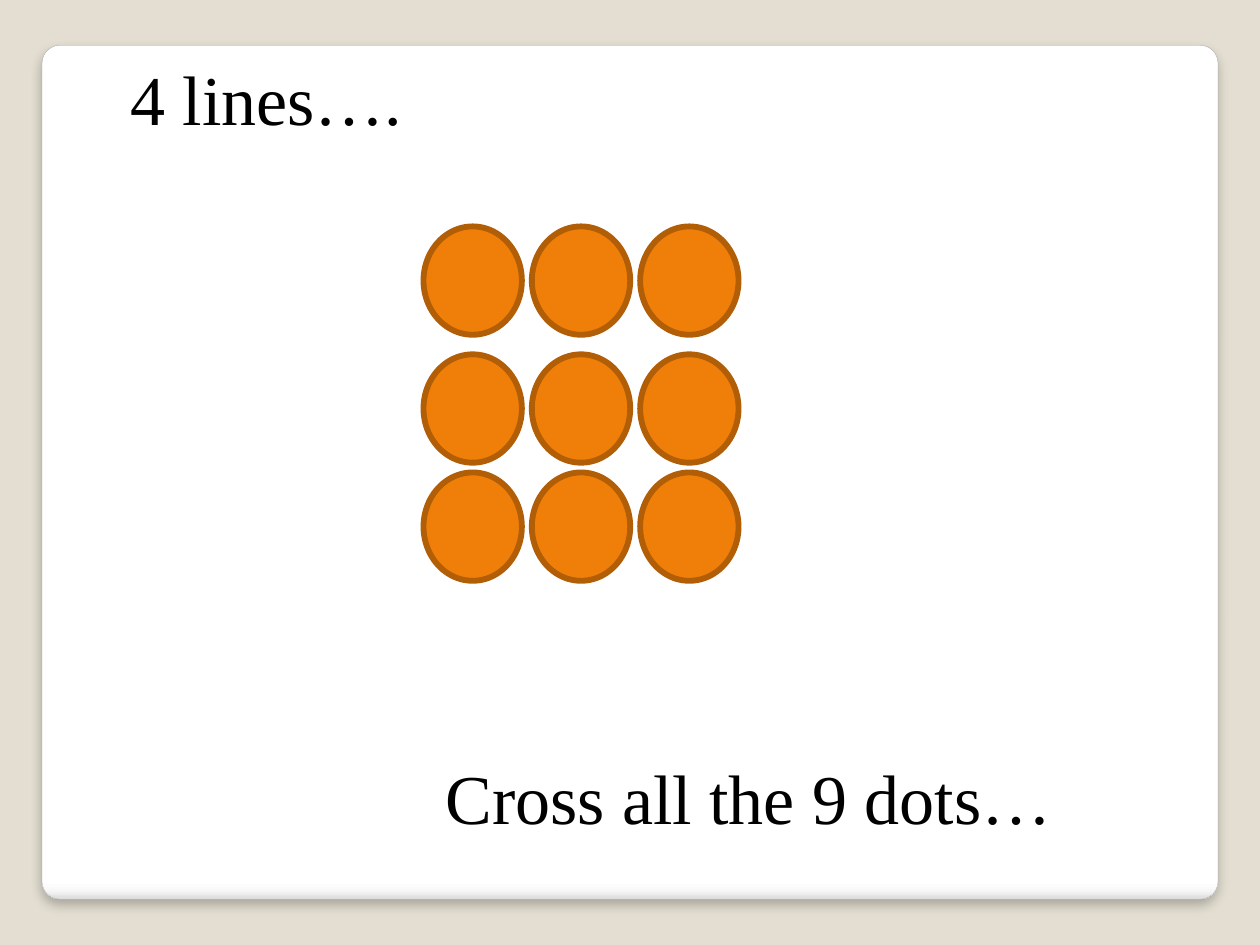
from dataclasses import dataclass
from itertools import product

from lxml.etree import SubElement
from pptx import Presentation
from pptx.dml.color import RGBColor
from pptx.enum.shapes import MSO_SHAPE
from pptx.enum.text import MSO_AUTO_SIZE
from pptx.oxml.ns import qn
from pptx.util import Pt


@dataclass(frozen=True)
class Theme:
    backdrop: str = "E3DED1"
    card_stops: tuple = ((0, "FFFFFF"), (98, "FFFFFF"), (99, "F7F7F7"), (100, "DADADA"))
    card_edge: str = "A4A4A4"
    shadow: str = "000000"
    dot: str = "F07F09"
    dot_edge: str = "B25E07"
    ink: str = "000000"
    font: str = "Times New Roman"
    text_size: float = 40


def add_color(parent, color):
    return SubElement(parent, qn("a:srgbClr"), val=color)


class SlideBuilder:
    def __init__(self, page, theme):
        self.page = page
        self.theme = theme

    def background(self):
        fill = self.page.background.fill
        fill.solid()
        fill.fore_color.rgb = RGBColor.from_string(self.theme.backdrop)

    def shape(self, kind, left, top, width, height, edge, edge_width):
        shape = self.page.shapes.add_shape(kind, Pt(left), Pt(top), Pt(width), Pt(height))
        shape.line.color.rgb = RGBColor.from_string(edge)
        shape.line.width = Pt(edge_width)
        shape.shadow.inherit = False
        return shape

    def card(self, left, top, width, height):
        card = self.shape(MSO_SHAPE.ROUNDED_RECTANGLE, left, top, width, height,
                          self.theme.card_edge, 0.16)
        card.adjustments[0] = 0.021
        # Gradient from top to bottom, darkening at the lower edge
        card.fill.gradient()
        card.fill.gradient_angle = 270
        properties = card._element.spPr
        stops = properties.find(".//" + qn("a:gsLst"))
        for stop in list(stops):
            stops.remove(stop)
        for percent, color in self.theme.card_stops:
            add_color(SubElement(stops, qn("a:gs"), pos=str(percent * 1000)), color)
        # Soft shadow below
        shadow = SubElement(properties.find(qn("a:effectLst")), qn("a:outerShdw"),
                            blurRad=str(Pt(6)), dist=str(Pt(4)), dir="5400000",
                            algn="ctr", rotWithShape="0")
        SubElement(add_color(shadow, self.theme.shadow), qn("a:alpha"), val="25000")

    def dot(self, left, top, width, height):
        dot = self.shape(MSO_SHAPE.OVAL, left, top, width, height,
                         self.theme.dot_edge, 3.35)
        dot.fill.solid()
        dot.fill.fore_color.rgb = RGBColor.from_string(self.theme.dot)

    def text(self, words, left, top, width, height):
        box = self.page.shapes.add_textbox(Pt(left), Pt(top), Pt(width), Pt(height))
        frame = box.text_frame
        frame.word_wrap = True
        frame.auto_size = MSO_AUTO_SIZE.SHAPE_TO_FIT_TEXT
        paragraph = frame.paragraphs[0]
        paragraph.text = words
        paragraph.font.name = self.theme.font
        paragraph.font.size = Pt(self.theme.text_size)
        paragraph.font.color.rgb = RGBColor.from_string(self.theme.ink)


def main():
    deck = Presentation()
    deck.slide_width, deck.slide_height = Pt(720), Pt(540)
    builder = SlideBuilder(deck.slides.add_slide(deck.slide_layouts[6]), Theme())

    # Backdrop and card
    builder.background()
    builder.card(24, 25.9, 672, 488)

    # Nine dots; the rows are unevenly spaced
    row_tops = (129.4, 202.5, 270)
    for top, column in product(row_tops, range(3)):
        builder.dot(242 + column * 61.9, top, 56.2, 61.9)

    # Captions
    builder.text("4 lines….", 67.5, 28.1, 618.5, 55.7)
    builder.text("Cross all the 9 dots…", 247.5, 427.5, 472.5, 55.7)

    deck.save("out.pptx")


if __name__ == "__main__":
    main()
